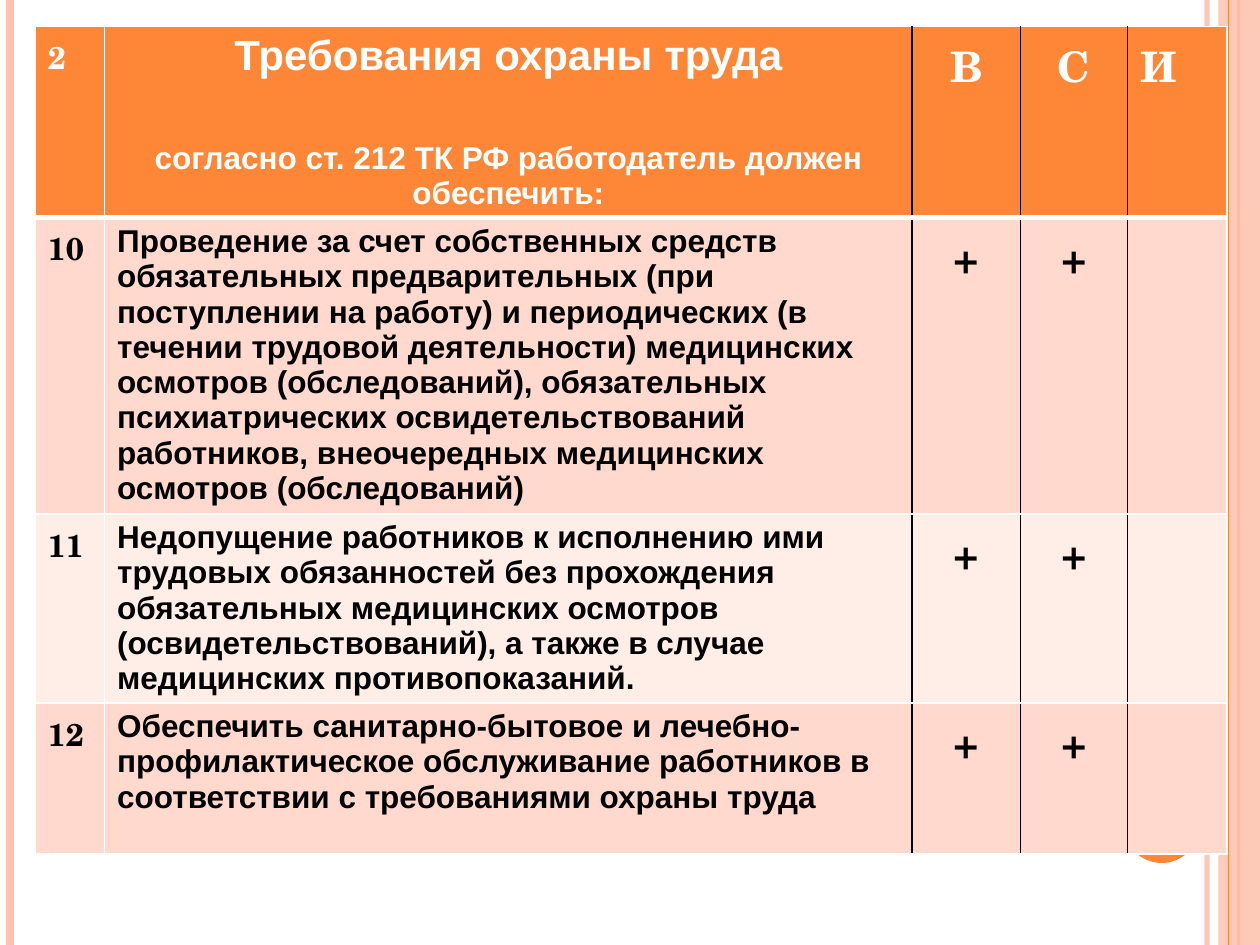
from lxml import etree
from pptx import Presentation
from pptx.dml.color import RGBColor
from pptx.enum.shapes import MSO_CONNECTOR, MSO_SHAPE
from pptx.enum.text import PP_ALIGN
from pptx.oxml.ns import qn
from pptx.util import Inches, Pt

LINE = MSO_CONNECTOR.STRAIGHT
RECT, OVAL = MSO_SHAPE.RECTANGLE, MSO_SHAPE.OVAL
LEFT, MID = PP_ALIGN.LEFT, PP_ALIGN.CENTER
HEX = {"main": "FE8637", "pale": "FEC3AE", "odd": "FFD9CE",
       "even": "FFEDE8", "white": "FFFFFF", "black": "000000"}
SANS, SERIF = "Arial", "TeX Gyre Schola"

deck = Presentation()
deck.slide_width, deck.slide_height = Inches(10), Inches(7.5)
# One percent of the slide's width and height
W, H = deck.slide_width / 100, deck.slide_height / 100
slide = deck.slides.add_slide(deck.slide_layouts[6])
parts = slide.shapes


def fade(fill, share):
    """Set the opacity of a solid fill, in percent."""
    tone = fill.find(".//" + qn("a:srgbClr"))
    etree.SubElement(tone, qn("a:alpha"), val=str(share * 1000))


def write(para, text, size, font, tone, align):
    """Add one bold run to a paragraph."""
    para.alignment = align
    run = para.add_run()
    run.text = text
    run.font.size, run.font.name, run.font.bold = Pt(size), font, True
    run.font.color.rgb = RGBColor.from_string(HEX[tone])


# Side stripes: place in percent of the width, colour, points, opacity
for x, tone, width, share in [(95.8, "pale", 3, 93), (0.8, "pale", 4.5, 100),
                              (98.3, "main", 1.5, 100), (97.5, "main", 0.75, 100)]:
    bar = parts.add_connector(LINE, int(x * W), 0, int(x * W), int(100 * H))
    bar.line.color.rgb = RGBColor.from_string(HEX[tone])
    bar.line.width = Pt(width)
    etree.SubElement(bar._element.spPr, qn("a:effectLst"))
    if share < 100:
        fade(bar._element.spPr, share)
    last = bar

# Right band, under the last stripe, and the disc behind the table
for kind, x, y, wide, high, tone, share in [
        (RECT, 96.7, 0, 3.3, 100, "pale", 87),
        (OVAL, 89.2, 83.33, 6, 8, "main", 100)]:
    form = parts.add_shape(kind, int(x * W), int(y * H), int(wide * W), int(high * H))
    form.shadow.inherit = False
    form.fill.solid()
    form.fill.fore_color.rgb = RGBColor.from_string(HEX[tone])
    form.line.fill.background()
    if share < 100:
        fade(form._element.spPr, share)
        last._element.addprevious(form._element)

# Table text: number, duty, then the three marks
HEAD = ["Требования охраны труда",
        "согласно ст. 212 ТК РФ работодатель должен обеспечить:"]
ROWS = [
    ("2", HEAD, "В", "С", "И"),
    ("10", ["Проведение за счет собственных средств обязательных предварительных "
            "(при поступлении на работу) и периодических (в течении трудовой "
            "деятельности) медицинских осмотров (обследований), обязательных "
            "психиатрических освидетельствований работников, внеочередных "
            "медицинских осмотров (обследований)"], "+", "+", ""),
    ("11", ["Недопущение работников к исполнению ими трудовых обязанностей без "
            "прохождения обязательных медицинских осмотров (освидетельствований), "
            "а также в случае медицинских противопоказаний."], "+", "+", ""),
    ("12", ["Обеспечить санитарно-бытовое и лечебно-профилактическое обслуживание "
            "работников в соответствии с требованиями охраны труда"], "+", "+", ""),
]
COLS = [5.5, 64.1, 8.6, 8.5, 7.9]
HIGH = [19.73, 31.33, 20, 16]

frame = parts.add_table(len(ROWS), len(COLS), int(2.8 * W), int(2.8 * H),
                        int(sum(COLS) * W), int(sum(HIGH) * H))
grid = frame.table
for col, wide in zip(grid.columns, COLS):
    col.width = int(wide * W)
for row, high in zip(grid.rows, HIGH):
    row.height = int(high * H)

for r, row in enumerate(ROWS):
    top = r == 0
    ink = "white" if top else "black"
    for c, item in enumerate(row):
        cell = grid.cell(r, c)
        cell.fill.solid()
        shade = "main" if top else "odd" if r % 2 else "even"
        cell.fill.fore_color.rgb = RGBColor.from_string(HEX[shade])

        # Text
        body = cell.text_frame
        para = body.paragraphs[0]
        if c == 0:
            write(para, item, 18, SERIF, ink, LEFT)
        elif c == 1:
            write(para, item[0], 24 if top else 18, SANS, ink, MID if top else LEFT)
            for more in item[1:]:
                para = body.add_paragraph()
                para.space_before = Pt(35)
                write(para, more, 18, SANS, ink, MID)
        elif item:
            write(para, item, 24, SERIF, ink, LEFT if c == 4 else MID)
        else:
            para.font.size = Pt(18)

        # Borders: black between the mark columns, white elsewhere
        edges = [("a:lnL", "black" if c > 1 else "white", 1),
                 ("a:lnR", "black" if 0 < c < 4 else "white", 1),
                 ("a:lnT", "white", 3 if r == 1 else 1),
                 ("a:lnB", "white", 3 if top else 1)]
        props = cell._tc.get_or_add_tcPr()
        for spot, (tag, tone, width) in enumerate(edges):
            edge = etree.Element(qn(tag), w=str(Pt(width)))
            fill = etree.SubElement(edge, qn("a:solidFill"))
            etree.SubElement(fill, qn("a:srgbClr"), val=HEX[tone])
            props.insert(spot, edge)

deck.save("out.pptx")
